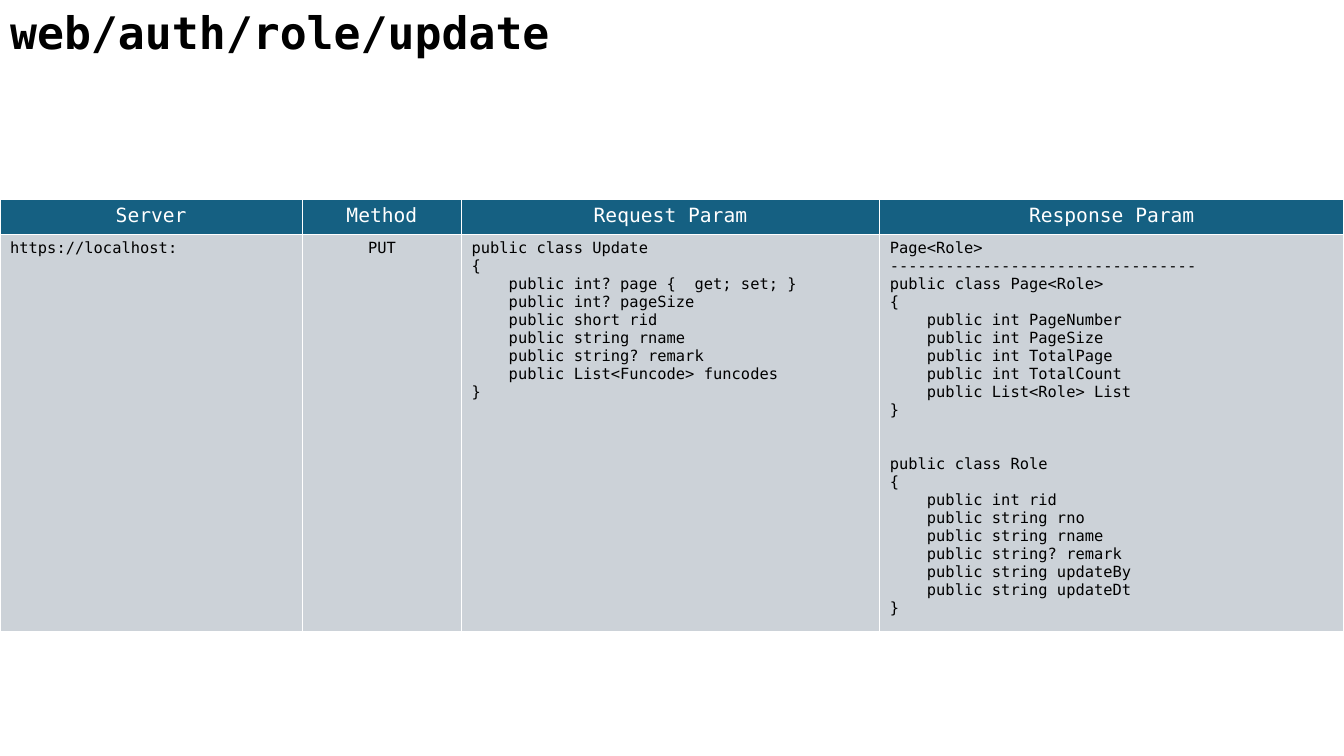
from dataclasses import dataclass

from lxml import etree
from pptx import Presentation
from pptx.dml.color import RGBColor
from pptx.enum.text import MSO_ANCHOR, MSO_AUTO_SIZE, PP_ALIGN
from pptx.oxml.ns import qn
from pptx.util import Cm, Pt

LEFT, CENTER = PP_ALIGN.LEFT, PP_ALIGN.CENTER
TOP = MSO_ANCHOR.TOP
GROW = MSO_AUTO_SIZE.SHAPE_TO_FIT_TEXT

FONT = "DejaVu Sans Mono"
COLORS = {"header": "156082", "body": "CCD2D8", "text": "000000", "line": "FFFFFF"}
ROW_HEIGHTS = (0.87, 10.0)
CLASS_GAP = Pt(25.7)


@dataclass
class Column:
    heading: str
    width: float
    blocks: list[str]
    align: PP_ALIGN = LEFT


REQUEST = """public class Update
{
    public int? page {  get; set; }
    public int? pageSize
    public short rid
    public string rname
    public string? remark
    public List<Funcode> funcodes
}"""

RESPONSE_PAGE = """Page<Role>
---------------------------------
public class Page<Role>
{
    public int PageNumber
    public int PageSize
    public int TotalPage
    public int TotalCount
    public List<Role> List
}"""

RESPONSE_ROLE = """public class Role
{
    public int rid
    public string rno
    public string rname
    public string? remark
    public string updateBy
    public string updateDt
}"""

COLUMNS = [
    Column("Server", 7.62, ["https://localhost:"]),
    Column("Method", 4.01, ["PUT"], CENTER),
    Column("Request Param", 10.54, [REQUEST]),
    Column("Response Param", 11.7, [RESPONSE_PAGE, RESPONSE_ROLE]),
]


def style_text(tf, size: float, color: str, align: PP_ALIGN, bold: bool = False) -> None:
    for p in tf.paragraphs:
        p.alignment = align
        for r in p.runs:
            r.font.name = FONT
            r.font.size = Pt(size)
            r.font.bold = bold
            r.font.color.rgb = RGBColor.from_string(COLORS[color])


def style_cell(cell, fill: str) -> None:
    # Borders come before the fill in the cell properties
    tc_pr = cell._tc.get_or_add_tcPr()
    for side in ("lnL", "lnR", "lnT", "lnB"):
        ln = etree.SubElement(tc_pr, qn(f"a:{side}"), w=str(Pt(1)))
        solid = etree.SubElement(ln, qn("a:solidFill"))
        etree.SubElement(solid, qn("a:srgbClr"), val=COLORS["line"])
    cell.fill.solid()
    cell.fill.fore_color.rgb = RGBColor.from_string(COLORS[fill])


def fill_column(table, index: int, column: Column) -> None:
    table.columns[index].width = Cm(column.width)
    head, body = table.cell(0, index), table.cell(1, index)

    head.text_frame.text = column.heading
    style_text(head.text_frame, 14, "line", CENTER)
    style_cell(head, "header")

    tf = body.text_frame
    tf.text = "\n".join(column.blocks)
    style_text(tf, 11, "text", column.align)
    style_cell(body, "body")

    # Space between code blocks
    start = 0
    for block in column.blocks[:-1]:
        start += len(block.splitlines())
        tf.paragraphs[start].space_before = CLASS_GAP


def main() -> None:
    prs = Presentation()
    prs.slide_width, prs.slide_height = Cm(33.87), Cm(19.05)
    s = prs.slides.add_slide(prs.slide_layouts[5])

    # Title
    title = s.shapes.title
    title.left, title.top, title.width, title.height = Cm(0), Cm(0), Cm(24), Cm(1.63)
    tf = title.text_frame
    tf.text = "web/auth/role/update"
    tf.word_wrap = True
    tf.auto_size = GROW
    tf.vertical_anchor = TOP
    style_text(tf, 32, "text", LEFT, bold=True)

    # Endpoint table
    width = sum(column.width for column in COLUMNS)
    table = s.shapes.add_table(len(ROW_HEIGHTS), len(COLUMNS), Cm(0), Cm(5.03),
                               Cm(width), Cm(sum(ROW_HEIGHTS))).table
    for row, height in zip(table.rows, ROW_HEIGHTS):
        row.height = Cm(height)
    for index, column in enumerate(COLUMNS):
        fill_column(table, index, column)

    prs.save("out.pptx")


if __name__ == "__main__":
    main()
